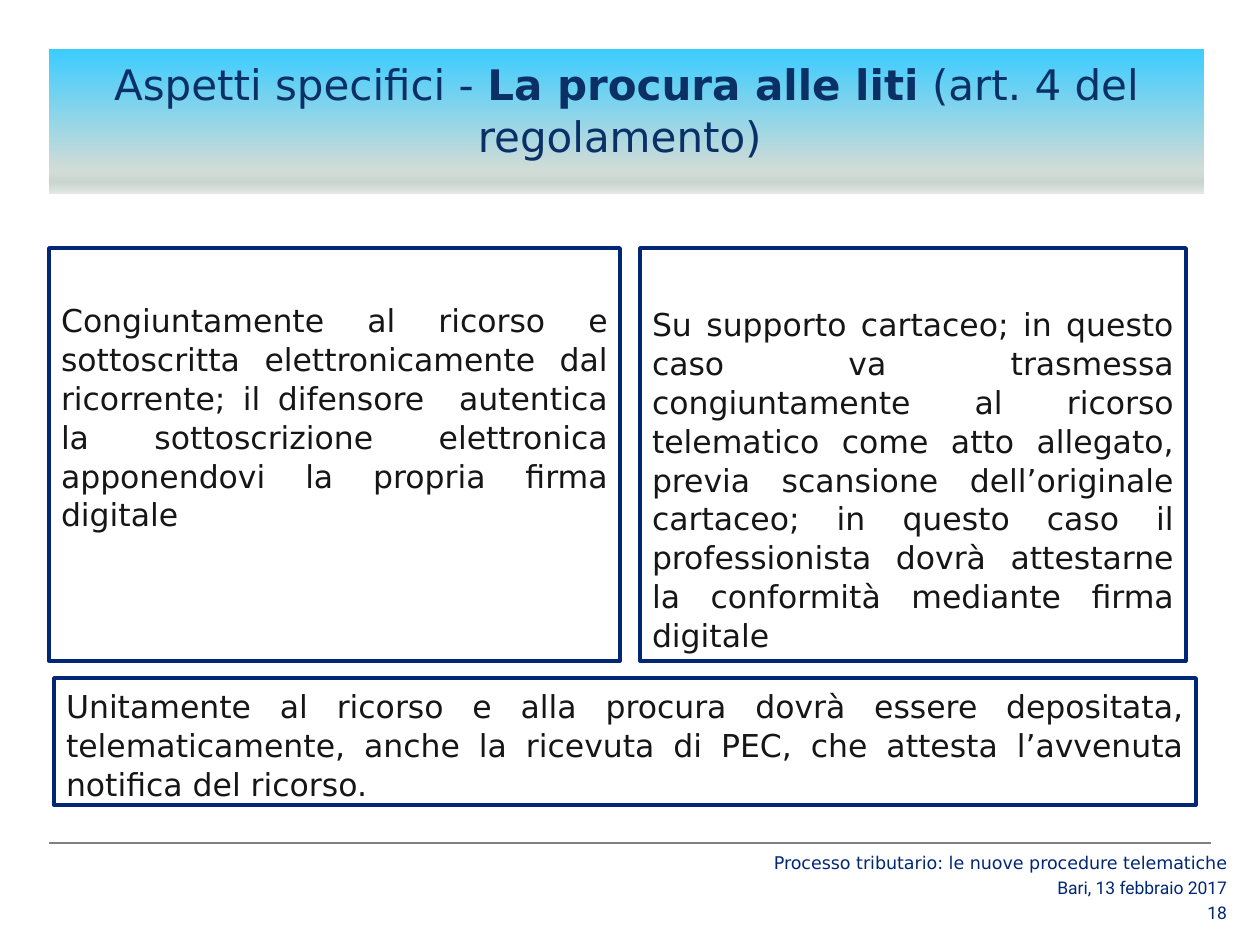
from dataclasses import dataclass

from lxml import etree
from pptx import Presentation
from pptx.dml.color import RGBColor
from pptx.enum.shapes import MSO_CONNECTOR, MSO_SHAPE
from pptx.enum.text import MSO_ANCHOR, MSO_AUTO_SIZE, PP_ALIGN
from pptx.oxml import parse_xml
from pptx.oxml.ns import nsdecls, qn
from pptx.util import Emu, Pt

EMU_PER_PX = 914400 / 126
SIDE_INSET = 12

NAVY = RGBColor(0x00, 0x27, 0x76)
TITLE_BLUE = RGBColor(0x0B, 0x30, 0x66)
INK = RGBColor(0x16, 0x16, 0x16)
GRAY = RGBColor(0x80, 0x80, 0x80)
WHITE = RGBColor(0xFF, 0xFF, 0xFF)
TITLE_GRADIENT = (
    (0, RGBColor(0x3B, 0xCC, 0xFF)),
    (84, RGBColor(0xD2, 0xDC, 0xD6)),
    (92, RGBColor(0xC9, 0xD5, 0xCE)),
    (100, RGBColor(0xE2, 0xE8, 0xE4)),
)


@dataclass(frozen=True)
class Box:
    left: int
    top: int
    width: int
    height: int


@dataclass(frozen=True)
class Panel:
    box: Box
    top_inset: int
    text: str


@dataclass(frozen=True)
class FooterLine:
    box: Box
    text: str
    font_name: str


TITLE_BOX = Box(49, 49, 1155, 145)
TITLE_RUNS = (
    ("Aspetti specifici - ", False),
    ("La procura alle liti", True),
    (" (art. 4 del regolamento) ", False),
)
PANELS = (
    Panel(
        Box(640, 248, 546, 413), 56,
        "Su supporto cartaceo; in questo caso va trasmessa congiuntamente al "
        "ricorso telematico come atto allegato, previa scansione dell’originale "
        "cartaceo; in questo caso il professionista dovrà attestarne la "
        "conformità mediante firma digitale",
    ),
    Panel(
        Box(49, 248, 571, 413), 52,
        "Congiuntamente al ricorso e sottoscritta elettronicamente dal "
        "ricorrente; il difensore  autentica la sottoscrizione elettronica "
        "apponendovi la propria firma digitale",
    ),
    Panel(
        Box(54, 678, 1142, 127), 8,
        "Unitamente al ricorso e alla procura dovrà essere depositata, "
        "telematicamente, anche la ricevuta di PEC, che attesta l’avvenuta "
        "notifica del ricorso.",
    ),
)
FOOTER_LINES = (
    FooterLine(Box(748, 850, 491, 25),
               "Processo tributario: le nuove procedure telematiche", "DejaVu Sans"),
    FooterLine(Box(848, 878, 391, 20), "Bari, 13 febbraio 2017", "Roboto"),
    FooterLine(Box(848, 902, 391, 20), "18", "Roboto"),
)


def px(length: int) -> Emu:
    return Emu(round(length * EMU_PER_PX))


def bounds(box: Box) -> tuple:
    return px(box.left), px(box.top), px(box.width), px(box.height)


def write_text(shape, runs, *, size, color, alignment, font_name="DejaVu Sans",
               top_inset=0, anchor=MSO_ANCHOR.TOP, line_spacing=1.0) -> None:
    """Fill a shape with one paragraph made of (text, bold) runs."""
    frame = shape.text_frame
    frame.word_wrap = True
    frame.auto_size = MSO_AUTO_SIZE.NONE
    frame.vertical_anchor = anchor
    frame.margin_left = frame.margin_right = px(SIDE_INSET)
    frame.margin_top, frame.margin_bottom = px(top_inset), 0
    paragraph = frame.paragraphs[0]
    paragraph.alignment = alignment
    paragraph.line_spacing = line_spacing
    for text, bold in runs:
        run = paragraph.add_run()
        run.text = text
        run.font.name = font_name
        run.font.size = Pt(size)
        run.font.bold = bold
        run.font.color.rgb = color


def fill_with_gradient(shape, stops) -> None:
    """Apply a top-to-bottom gradient with any number of stops."""
    shape.fill.gradient()
    gradient = shape._element.spPr.find(qn("a:gradFill"))
    stop_xml = "".join(
        f'<a:gs pos="{percent * 1000}"><a:srgbClr val="{color}"/></a:gs>'
        for percent, color in stops
    )
    gradient.getparent().replace(gradient, parse_xml(
        f'<a:gradFill {nsdecls("a")} rotWithShape="1"><a:gsLst>{stop_xml}</a:gsLst>'
        '<a:lin ang="5400000" scaled="0"/></a:gradFill>'
    ))


def format_title(slide) -> None:
    title = slide.shapes.title
    title.left, title.top, title.width, title.height = bounds(TITLE_BOX)
    fill_with_gradient(title, TITLE_GRADIENT)
    write_text(title, TITLE_RUNS, size=24, color=TITLE_BLUE,
               alignment=PP_ALIGN.CENTER, top_inset=7, line_spacing=1.04)


def add_panel(slide, panel: Panel) -> None:
    shape = slide.shapes.add_shape(MSO_SHAPE.RECTANGLE, *bounds(panel.box))
    shape.shadow.inherit = False
    shape.fill.solid()
    shape.fill.fore_color.rgb = WHITE
    shape.line.color.rgb = NAVY
    shape.line.width = Pt(2)
    write_text(shape, [(panel.text, False)], size=18, color=INK,
               alignment=PP_ALIGN.JUSTIFY, top_inset=panel.top_inset,
               line_spacing=1.03)


def add_footer_rule(slide) -> None:
    rule = slide.shapes.add_connector(
        MSO_CONNECTOR.STRAIGHT, px(49), px(843), px(1211), px(843))
    rule.line.color.rgb = GRAY
    rule.line.width = Pt(0.75)
    etree.SubElement(rule._element.spPr, qn("a:effectLst"))


def add_footer_line(slide, line: FooterLine) -> None:
    shape = slide.shapes.add_textbox(*bounds(line.box))
    write_text(shape, [(line.text, False)], size=10, color=NAVY,
               alignment=PP_ALIGN.RIGHT, font_name=line.font_name,
               anchor=MSO_ANCHOR.MIDDLE)


def main() -> None:
    presentation = Presentation()
    presentation.slide_width, presentation.slide_height = px(1260), px(945)
    slide = presentation.slides.add_slide(presentation.slide_layouts[5])
    format_title(slide)
    add_footer_rule(slide)
    for line in FOOTER_LINES:
        add_footer_line(slide, line)
    for panel in PANELS:
        add_panel(slide, panel)
    presentation.save("out.pptx")


if __name__ == "__main__":
    main()
